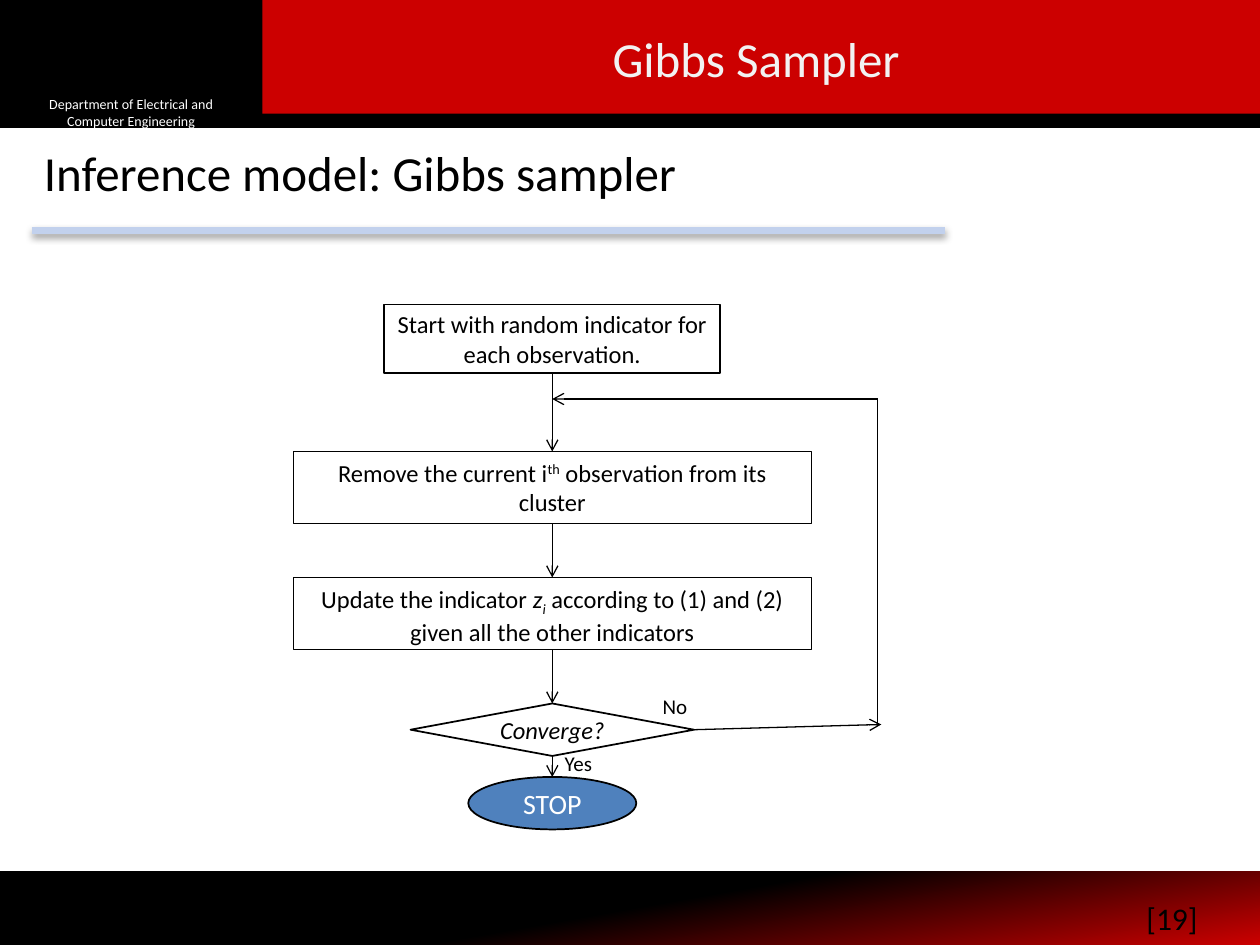
from lxml import etree
from pptx import Presentation
from pptx.dml.color import RGBColor
from pptx.enum.shapes import MSO_CONNECTOR, MSO_SHAPE
from pptx.enum.text import MSO_ANCHOR, PP_ALIGN
from pptx.oxml.ns import qn
from pptx.util import Pt

RECT = MSO_SHAPE.RECTANGLE
RHOMB = MSO_SHAPE.FLOWCHART_DECISION
OVAL = MSO_SHAPE.OVAL
LINE = MSO_CONNECTOR.STRAIGHT
TOP = MSO_ANCHOR.TOP
MID = MSO_ANCHOR.MIDDLE
LEFT = PP_ALIGN.LEFT
CENTER = PP_ALIGN.CENTER

BLACK = "000000"
WHITE = "FFFFFF"
RED = "CC0000"
BLUE = "4F81BD"


def tint(code):
    return RGBColor.from_string(code)


def apply(item, form):
    for key, value in form.items():
        setattr(item, key, value)


def write(shape, runs, size, color=BLACK, anchor=TOP, align=LEFT, wrap=True):
    frame = shape.text_frame
    apply(frame, {"word_wrap": wrap, "vertical_anchor": anchor})
    para = frame.paragraphs[0]
    para.alignment = align
    for text, slant, base in runs:
        run = para.add_run()
        run.text = text
        apply(run.font, {"name": "Calibri", "size": Pt(size), "italic": slant})
        run.font.color.rgb = tint(color)
        if base:
            run._r.get_or_add_rPr().set("baseline", str(base * 1000))


def plain(text):
    return [(text, False, 0)]


def label(slide, box, text, size, **form):
    shape = slide.shapes.add_textbox(*map(Pt, box))
    write(shape, plain(text), size, **form)


def block(slide, kind, box, fill=None, line=None, width=1):
    shape = slide.shapes.add_shape(kind, *map(Pt, box))
    shape.shadow.inherit = False
    if fill:
        shape.fill.solid()
        shape.fill.fore_color.rgb = tint(fill)
    else:
        shape.fill.background()
    if line:
        shape.line.color.rgb = tint(line)
        shape.line.width = Pt(width)
    else:
        shape.line.fill.background()
    return shape


def link(slide, start, end, color=BLACK, width=0.75, head=True):
    wire = slide.shapes.add_connector(LINE, *map(Pt, (*start, *end)))
    wire.line.color.rgb = tint(color)
    wire.line.width = Pt(width)
    if head:
        stroke = wire.line._get_or_add_ln()
        etree.SubElement(stroke, qn("a:tailEnd"), type="arrow")
    return etree.SubElement(wire._element.spPr, qn("a:effectLst"))


def banner(slide, box):
    x, y, w, h = box
    block(slide, RECT, box, BLACK, BLACK, 2)
    block(slide, RECT, (x + 150, y - 1, w - 150, h - 6), RED)
    dept = block(slide, RECT, (x + 12, y + 55, 126, 18), BLACK)
    write(dept, plain("Department of Electrical and Computer Engineering"),
          8, WHITE, MID, CENTER)
    label(slide, (x + 174, y + 12, 516, 42), "Gibbs Sampler", 28,
          color="F2F2F2", anchor=MID, align=CENTER)


def title(slide, box):
    x, y, w, h = box
    label(slide, box, "Inference model: Gibbs sampler", 28)
    rule = y + h - 6
    effect = link(slide, (x, rule), (x + 522, rule), "C2D1ED", 4, False)
    shade = etree.SubElement(effect, qn("a:outerShdw"), blurRad=str(Pt(4)),
                             dist=str(Pt(2)), dir=str(85 * 60000), rotWithShape="0")
    color = etree.SubElement(shade, qn("a:srgbClr"), val=BLACK)
    etree.SubElement(color, qn("a:alpha"), val="40000")


def flow(slide, box):
    x, y, w, h = box
    mid = x + 148
    step = 72
    first = y + 84
    steps = [
        (RECT, y, 192, 39, 1, MID, 14, None, BLACK,
         plain("Start with random indicator for each observation.")),
        (RECT, first, 296, 41, 0.75, TOP, 14, None, BLACK,
         [("Remove the current i", False, 0), ("th", False, 30),
          (" observation from its cluster", False, 0)]),
        (RECT, first + step, 296, 41, 0.75, TOP, 14, None, BLACK,
         [("Update the indicator ", False, 0), ("z", True, 0), ("i", True, -25),
          (" according to (1) and (2) given all the other indicators", False, 0)]),
        (RHOMB, first + 2 * step, 162, 30, 1, MID, 14, None, BLACK,
         [("Converge?", True, 0)]),
        (OVAL, y + h - 30, 96, 30, 1, MID, 16, BLUE, WHITE, plain("STOP")),
    ]
    for kind, top, wide, high, edge, anchor, size, fill, ink, runs in steps:
        shape = block(slide, kind, (mid - wide / 2, top, wide, high),
                      fill, BLACK, edge)
        write(shape, runs, size, ink, anchor, CENTER)
    for above, below in zip(steps, steps[1:]):
        link(slide, (mid, above[1] + above[3]), (mid, below[1]))
    side = x + w
    back = y + 54
    turn = y + 240
    link(slide, (mid + 81, turn + 3), (side + 2, turn))
    link(slide, (side, turn), (side, back), head=False)
    link(slide, (side, back), (mid, back))
    label(slide, (mid, y + 251.5, 30, 22), "Yes", 12, wrap=False)
    label(slide, (mid + 56, y + 219, 29, 22), "No", 12, wrap=False)


def footer(slide, box):
    x, y, w, h = box
    band = block(slide, RECT, box, BLACK)
    band.fill.gradient()
    band.fill.gradient_angle = 280
    for stop, (place, color) in zip(band.fill.gradient_stops,
                                    [(0.5, BLACK), (1, RED)]):
        stop.position = place
        stop.color.rgb = tint(color)
    label(slide, (x + w - 72, y + 12, 48, 24), "[19]", 18)


def main():
    deck = Presentation()
    apply(deck, {"slide_width": Pt(720), "slide_height": Pt(540)})
    slide = deck.slides.add_slide(deck.slide_layouts[6])
    footer(slide, (0, 498, 720, 42))
    banner(slide, (0, 0, 720, 72))
    title(slide, (18, 78, 648, 60))
    flow(slide, (167.6, 174, 334, 300))
    deck.save("out.pptx")


if __name__ == "__main__":
    main()
